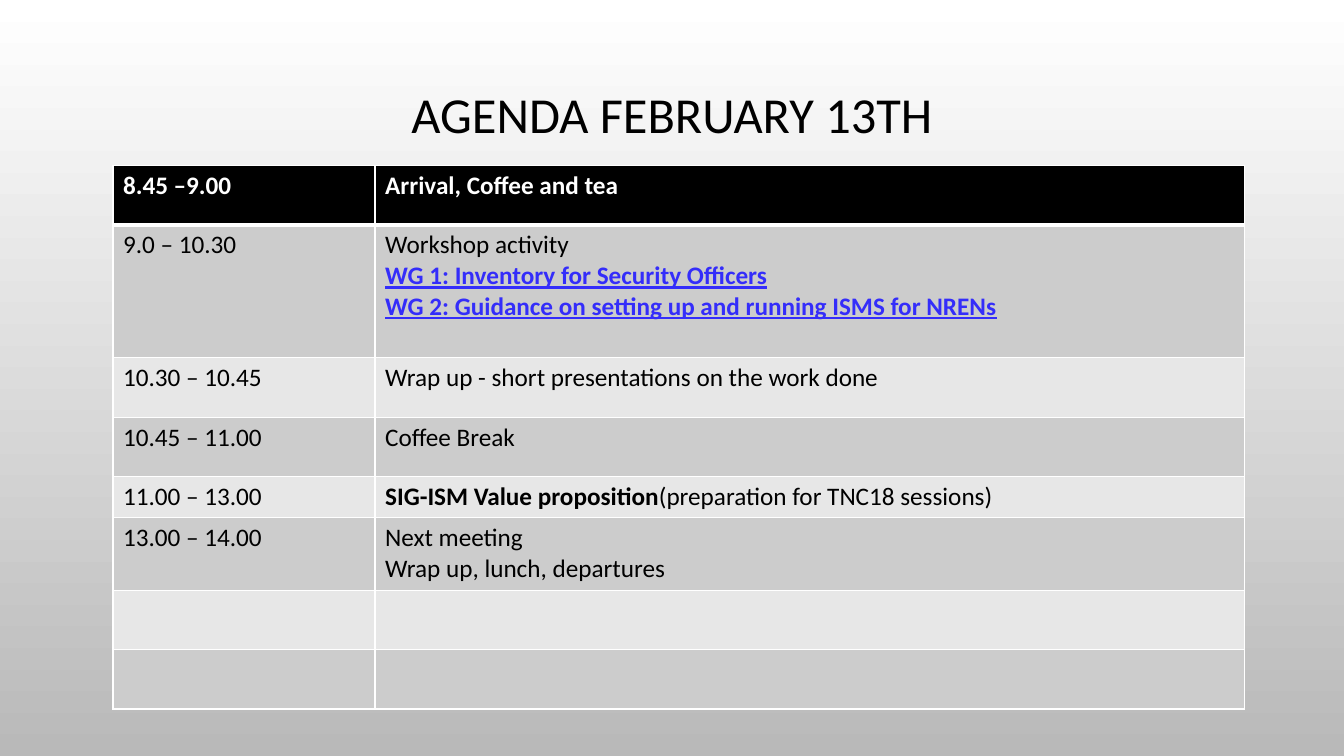
from pptx import Presentation
from pptx.dml.color import RGBColor
from pptx.enum import text
from pptx.oxml import parse_xml
from pptx.oxml.ns import nsdecls
from pptx.util import Inches, Pt

FONT = "Calibri"
BLACK = RGBColor(0x00, 0x00, 0x00)
WHITE = RGBColor(0xFF, 0xFF, 0xFF)
LINK_BLUE = RGBColor(0x34, 0x2D, 0xFA)
DARK_BAND = RGBColor(0xCC, 0xCC, 0xCC)
LIGHT_BAND = RGBColor(0xE7, 0xE7, 0xE7)
BACKGROUND_END = RGBColor(0xB9, 0xB9, 0xB9)

LINK = {"color": LINK_BLUE, "bold": True, "underline": True}
COLUMN_WIDTHS = (2.6, 8.62)

# Row height, time, and the activity's paragraphs as lists of (words, format) runs
AGENDA = [
    (0.59, "8.45 –9.00", [[("Arrival, Coffee and tea", {})]]),
    (1.32, "9.0 – 10.30", [
        [("Workshop activity", {})],
        [("WG 1: Inventory for Security Officers", LINK)],
        [("WG 2: Guidance on setting up and running ISMS for NRENs", LINK)],
    ]),
    (0.59, "10.30 – 10.45", [[("Wrap up - short presentations on the work done", {})]]),
    (0.59, "10.45 – 11.00", [[("Coffee Break", {})]]),
    (0.39, "11.00 – 13.00", [
        [("SIG-ISM Value proposition", {"bold": True}),
         ("(preparation for TNC18 sessions)", {})],
    ]),
    (0.72, "13.00 – 14.00", [
        [("Next meeting", {})],
        [("Wrap up, lunch, departures", {})],
    ]),
    (0.59, "", []),
    (0.59, "", []),
]


def add_run(paragraph, words, size=18, color=BLACK, bold=False, underline=False):
    run = paragraph.add_run()
    run.text = words
    font = run.font
    font.name, font.size, font.bold, font.underline = FONT, Pt(size), bold, underline
    font.color.rgb = color


def set_background(slide):
    fill = slide.background.fill
    fill.gradient()
    fill.gradient_angle = 270
    for stop, color, position in zip(fill.gradient_stops, (WHITE, BACKGROUND_END), (0, 1)):
        stop.color.rgb = color
        stop.position = position


def set_title(slide, words):
    title = slide.shapes.title
    title.left, title.top = Inches(1), Inches(0.68)
    title.width, title.height = Inches(11.33), Inches(0.97)
    frame = title.text_frame
    frame.auto_size = text.MSO_AUTO_SIZE.NONE
    frame.vertical_anchor = text.MSO_ANCHOR.MIDDLE
    paragraph = frame.paragraphs[0]
    paragraph.alignment = text.PP_ALIGN.CENTER
    paragraph.line_spacing = 0.9
    add_run(paragraph, words, size=36)


def set_borders(cell, top=1, bottom=1):
    properties = cell._tc.get_or_add_tcPr()
    for side, width in (("L", 1), ("R", 1), ("T", top), ("B", bottom)):
        properties.append(parse_xml(
            f'<a:ln{side} {nsdecls("a")} w="{Pt(width)}"><a:solidFill>'
            f'<a:srgbClr val="{WHITE}"/></a:solidFill></a:ln{side}>'))


def fill_cell(cell, paragraphs, fill, **base_format):
    cell.fill.solid()
    cell.fill.fore_color.rgb = fill
    frame = cell.text_frame
    for index, runs in enumerate(paragraphs):
        paragraph = frame.add_paragraph() if index else frame.paragraphs[0]
        for words, run_format in runs:
            add_run(paragraph, words, **{**base_format, **run_format})


def add_agenda(slide):
    height = sum(row[0] for row in AGENDA)
    table = slide.shapes.add_table(
        len(AGENDA), len(COLUMN_WIDTHS), Inches(1.12), Inches(1.64),
        Inches(sum(COLUMN_WIDTHS)), Inches(height)).table
    for column, width in zip(table.columns, COLUMN_WIDTHS):
        column.width = Inches(width)
    for index, (row_height, time, activity) in enumerate(AGENDA):
        row = table.rows[index]
        row.height = Inches(row_height)
        if index == 0:
            fill, base_format = BLACK, {"color": WHITE, "bold": True}
        else:
            fill, base_format = (DARK_BAND if index % 2 else LIGHT_BAND), {}
        time_paragraphs = [[(time, {})]] if time else []
        for cell, paragraphs in zip(row.cells, (time_paragraphs, activity)):
            set_borders(cell, top=3 if index == 1 else 1, bottom=3 if index == 0 else 1)
            fill_cell(cell, paragraphs, fill, **base_format)


def main():
    presentation = Presentation()
    presentation.slide_width = Inches(13.33)
    presentation.slide_height = Inches(7.5)
    slide = presentation.slides.add_slide(presentation.slide_layouts.get_by_name("Title Only"))
    set_background(slide)
    set_title(slide, "AGENDA FEBRUARY 13TH")
    add_agenda(slide)
    presentation.save("out.pptx")


if __name__ == "__main__":
    main()
